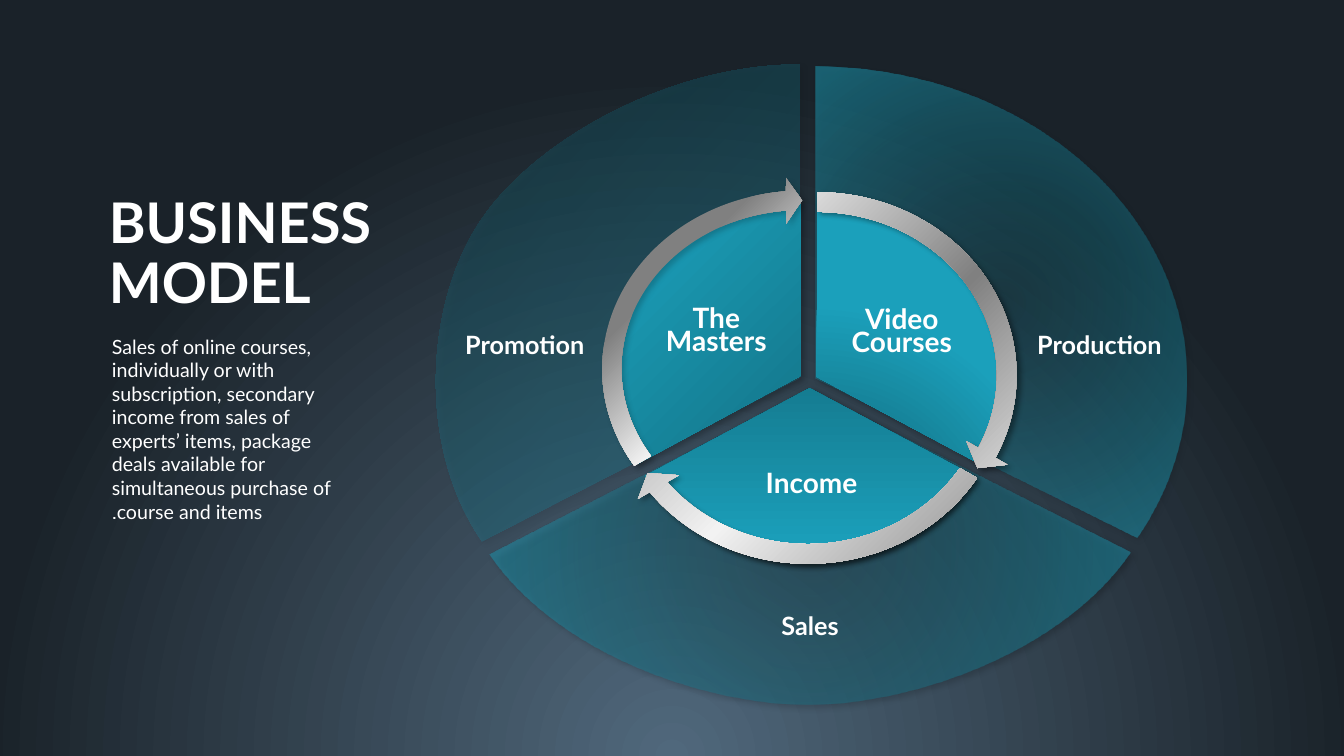
from dataclasses import dataclass

import lxml.etree
import pptx
import pptx.dml.color
import pptx.enum.shapes
import pptx.enum.text
import pptx.oxml.ns
import pptx.util

Inches = pptx.util.Inches
Pt = pptx.util.Pt
qn = pptx.oxml.ns.qn
ALIGN = pptx.enum.text.PP_ALIGN
ANCHOR = pptx.enum.text.MSO_ANCHOR


@dataclass(frozen=True)
class Theme:
    """Hold the colours and type sizes of the slide."""
    font: str = "Lato"
    text: str = "FFFFFF"
    night: str = "1A2229"
    glow: str = "50687C"
    deep: str = "0E5462"
    teal: str = "1BA0BB"
    gray: str = "808080"
    silver: str = "F2F2F2"
    shadow: str = "000000"
    title: int = 40
    sector: int = 20
    label: int = 18
    body: int = 14


T = Theme()
CENTER = (50, 50, 50, 50)
BELOW = (50, 130, 50, -30)
TOP_LEFT = (0, 0, 100, 100)
BOTTOM_RIGHT = (100, 100, 0, 0)

OUTER = [
    ((3.79, 0.06, 3.67, 4.68),
     [(3.79, 0.06), (5.1, 0.06), (6.31, 0.65), (6.97, 1.61),
      (7.63, 2.58), (7.63, 3.77), (6.97, 4.73)], (3.79, 3.15),
     [(0, T.deep, 30), (96, T.teal, 50)], CENTER, 20),
    ((0.56, 3.27, 6.35, 3.12),
     [(6.91, 4.88), (6.25, 5.85), (4.79, 6.38), (3.73, 6.39),
      (2.67, 6.39), (1.22, 5.87), (0.56, 4.9)], (3.73, 3.27),
     [(0, T.deep, 30), (96, T.teal, 50)], CENTER, 40),
    ((0.02, 0.04, 3.61, 4.73),
     [(0.48, 4.77), (-0.18, 3.81), (-0.07, 2.39), (0.46, 1.6),
      (0.98, 0.81), (2.32, 0.04), (3.63, 0.04)], (3.63, 3.15),
     [(0, T.deep, 30), (100, T.teal, 30)], TOP_LEFT, 20),
]
INNER = [
    ((1.92, 1.4, 3.77, 3.48),
     [(3.8, 1.4), (4.47, 1.4), (5.09, 1.73), (5.43, 2.27),
      (5.77, 2.81), (5.77, 3.47), (5.43, 4.01)], (3.8, 3.14), BELOW, 20,
     ["Video", "Courses"], (2.18, 1.18, 0.5, 2.03)),
    ((1.84, 1.51, 3.77, 3.48),
     [(5.36, 4.12), (5.02, 4.66), (4.4, 4.99), (3.73, 4.99),
      (3.05, 4.99), (2.43, 4.66), (2.1, 4.12)], (3.73, 3.25), 90, 40,
     ["Income"], (1, 2.36, 0.95, 0.4)),
    ((1.76, 1.39, 3.77, 3.48),
     [(2.01, 4.01), (1.67, 3.47), (1.67, 2.8), (2.01, 2.26),
      (2.35, 1.73), (2.97, 1.39), (3.64, 1.39)], (3.64, 3.13), BOTTOM_RIGHT, 20,
     ["The", "Masters"], (0.5, 1.18, 2.18, 2.03)),
]
ARROWS = [
    ((1.69, 1.17, 4.23, 3.91), 14.72, 161.99, 40,
     [(20, T.silver), (57, T.gray), (100, T.text)]),
    ((1.6, 1.22, 4.23, 3.91), 86.72, 18, 40,
     [(10, T.gray), (57, T.silver), (100, T.gray)]),
    ((1.54, 1.16, 4.23, 3.8), 158.73, 90, 20,
     [(22, T.gray), (42, T.silver), (67, T.gray), (89, T.silver)]),
]
LABELS = [
    ("Production", (5.77, 2.54, 1.67, 0.47)),
    ("Promotion", (0.08, 2.54, 1.65, 0.39)),
    ("Sales", (2.97, 5.33, 1.53, 0.64)),
]


def add_xml(parent, tag, **attrs):
    """Append a DrawingML child with the given attributes."""
    child = lxml.etree.SubElement(parent, qn(tag))
    for name, value in attrs.items():
        child.set(name, str(value))
    return child


def add_color(parent, color, opacity=100):
    """Append an RGB colour with an opacity in percent."""
    rgb = add_xml(parent, "a:srgbClr", val=color)
    if opacity < 100:
        add_xml(rgb, "a:alpha", val=opacity * 1000)


def paint(fill, element, stops, direction):
    """Apply a gradient along an angle or around a focus rectangle."""
    fill.gradient()
    grad = next(element.iter(qn("a:gradFill")))
    for child in list(grad):
        grad.remove(child)
    gs_list = add_xml(grad, "a:gsLst")
    for position, *color in stops:
        add_color(add_xml(gs_list, "a:gs", pos=position * 1000), *color)
    if isinstance(direction, tuple):
        focus = add_xml(grad, "a:path", path="circle")
        sides = {side: value * 1000 for side, value in zip("ltrb", direction)}
        add_xml(focus, "a:fillToRect", **sides)
    else:
        add_xml(grad, "a:lin", ang=direction * 60000, scaled=0)


def style(sp, stops, direction, shade):
    """Give a shape its gradient, no outline and a soft shadow."""
    paint(sp.fill, sp._element, stops, direction)
    sp.line.fill.background()
    sp.shadow.inherit = False
    effects = sp._element.spPr.find(qn("a:effectLst"))
    shadow = add_xml(effects, "a:outerShdw", blurRad=Pt(4), dist=Pt(3),
                     dir=45 * 60000, algn="tl", rotWithShape=0)
    add_color(shadow, T.shadow, shade)


def add_run(p, text, size, bold=True):
    """Add a run in the theme font and colour."""
    r = p.add_run()
    r.text = text
    r.font.name, r.font.size, r.font.bold = T.font, Pt(size), bold
    r.font.color.rgb = pptx.dml.color.RGBColor.from_string(T.text)


def set_frame(tf, margins, anchor):
    """Set wrapping, margins and anchor of a text frame."""
    tf.word_wrap = True
    tf.auto_size = pptx.enum.text.MSO_AUTO_SIZE.NONE
    tf.vertical_anchor = anchor
    tf.margin_left, tf.margin_top, tf.margin_right, tf.margin_bottom = map(Inches, margins)


def add_text(slide, box, text, size, align, bold=True):
    """Add a text box with one paragraph and return the paragraph."""
    tf = slide.shapes.add_textbox(*map(Inches, box)).text_frame
    set_frame(tf, (0.13,) * 4, ANCHOR.TOP)
    p = tf.paragraphs[0]
    p.alignment = align
    add_run(p, text, size, bold)
    return p


def add_sector(slide, origin, frame, rim, hub):
    """Draw a sector with a rim of two cubic curves and a hub point."""
    x, y, w, h = frame
    builder = slide.shapes.build_freeform(scale=1.0)
    builder.add_line_segments([(Inches(w), Inches(h))])
    sp = builder.convert_to_shape()
    sp.left, sp.top = Inches(origin[0] + x), Inches(origin[1] + y)
    outline = next(sp._element.iter(qn("a:path")))
    for child in list(outline):
        outline.remove(child)
    for tag, points in (("moveTo", rim[:1]), ("cubicBezTo", rim[1:4]),
                        ("cubicBezTo", rim[4:]), ("lnTo", [hub])):
        step = add_xml(outline, "a:" + tag)
        for px, py in points:
            add_xml(step, "a:pt", x=Inches(px - x), y=Inches(py - y))
    add_xml(outline, "a:close")
    return sp


def add_intro(slide, box):
    """Place the title and the description in the left column."""
    x, y, w, h = box
    title = slide.shapes.title
    title.left, title.top, title.width, title.height = map(Inches, (x, y, w, 0.85))
    set_frame(title.text_frame, (0.1,) * 4, ANCHOR.MIDDLE)
    p = title.text_frame.paragraphs[0]
    p.alignment, p.line_spacing = ALIGN.LEFT, 0.9
    add_run(p, "BUSINESS", T.title)
    p.add_line_break()
    add_run(p, "MODEL", T.title)
    p = add_text(slide, (x, y + 1.08, 2.73, h - 1.08),
                 "Sales of online courses, individually or with subscription, secondary income "
                 "from sales of experts’ items, package deals available for simultaneous "
                 "purchase of course and items.", T.body, ALIGN.LEFT, False)
    p._p.get_or_add_pPr().set("rtl", "1")


def add_wheel(slide, box):
    """Place the outer ring, the inner sectors, the arrows and the labels."""
    for frame, rim, hub, stops, focus, shade in OUTER:
        style(add_sector(slide, box, frame, rim, hub), stops, focus, shade)
    for frame, rim, hub, direction, shade, lines, margins in INNER:
        sp = add_sector(slide, box, frame, rim, hub)
        style(sp, [(0, T.deep), (96, T.teal)], direction, shade)
        tf = sp.text_frame
        set_frame(tf, margins, ANCHOR.MIDDLE)
        for i, line in enumerate(lines):
            p = tf.add_paragraph() if i else tf.paragraphs[0]
            p.alignment, p.line_spacing = ALIGN.CENTER, 0.7
            add_run(p, line, T.sector)
    for (x, y, w, h), end, start, shade, stops in ARROWS:
        sp = slide.shapes.add_shape(pptx.enum.shapes.MSO_SHAPE.CIRCULAR_ARROW,
                                    *map(Inches, (box[0] + x, box[1] + y, w, h)))
        for i, value in enumerate((0.05, 3.28, end, start, 0.06)):
            sp.adjustments[i] = value
        style(sp, stops, 45, shade)
    for text, (x, y, w, h) in LABELS:
        add_text(slide, (box[0] + x, box[1] + y, w, h), text, T.label, ALIGN.CENTER)


def main():
    """Build the slide and save it."""
    prs = pptx.Presentation()
    prs.slide_width, prs.slide_height = Inches(13.33), Inches(7.5)
    slide = prs.slides.add_slide(prs.slide_layouts[5])
    paint(slide.background.fill, slide._element, [(0, T.glow), (89, T.night)], BELOW)
    add_intro(slide, (0.98, 2.11, 3.17, 3.49))
    add_wheel(slide, (4.3, 0.6))
    prs.save("out.pptx")


if __name__ == "__main__":
    main()
